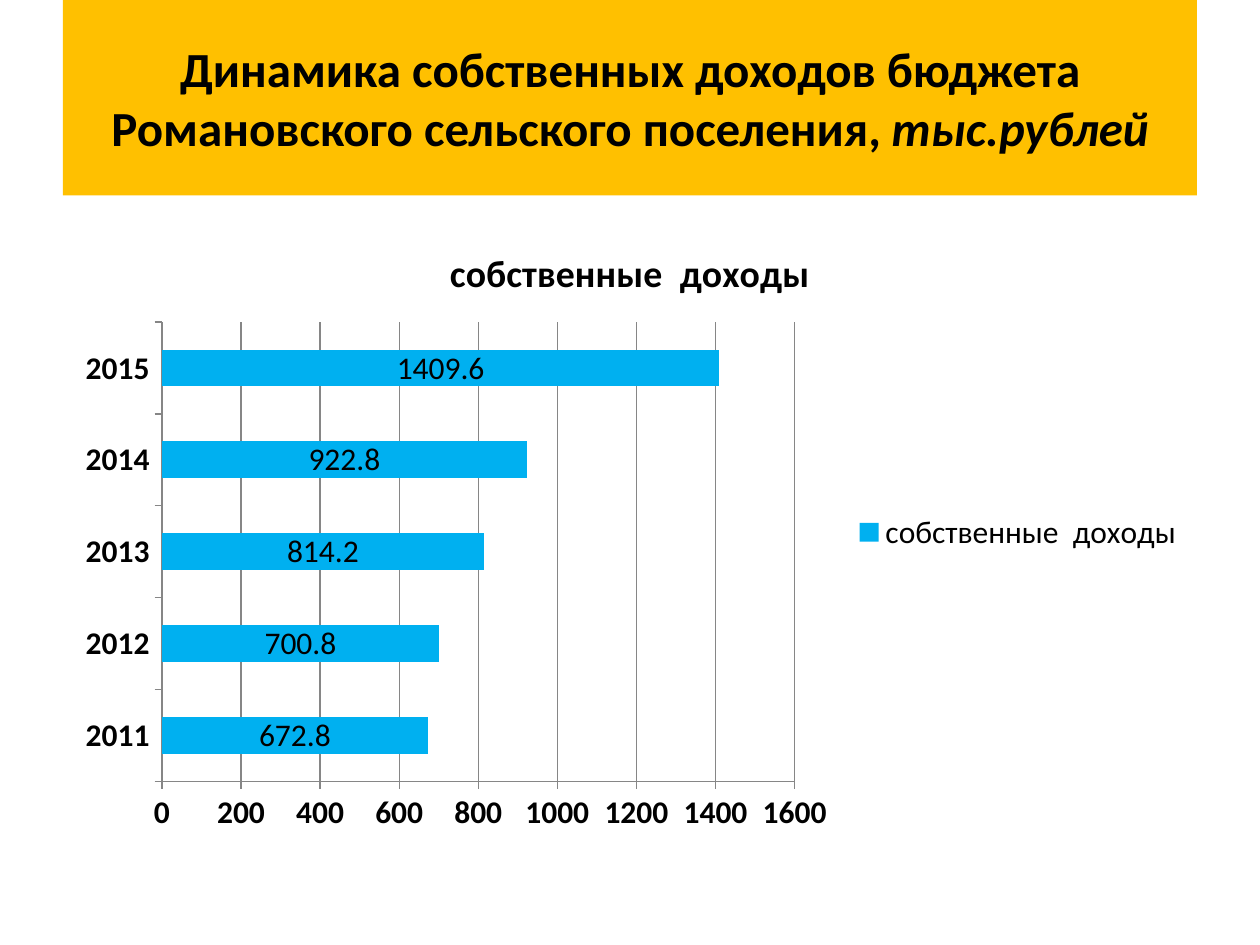
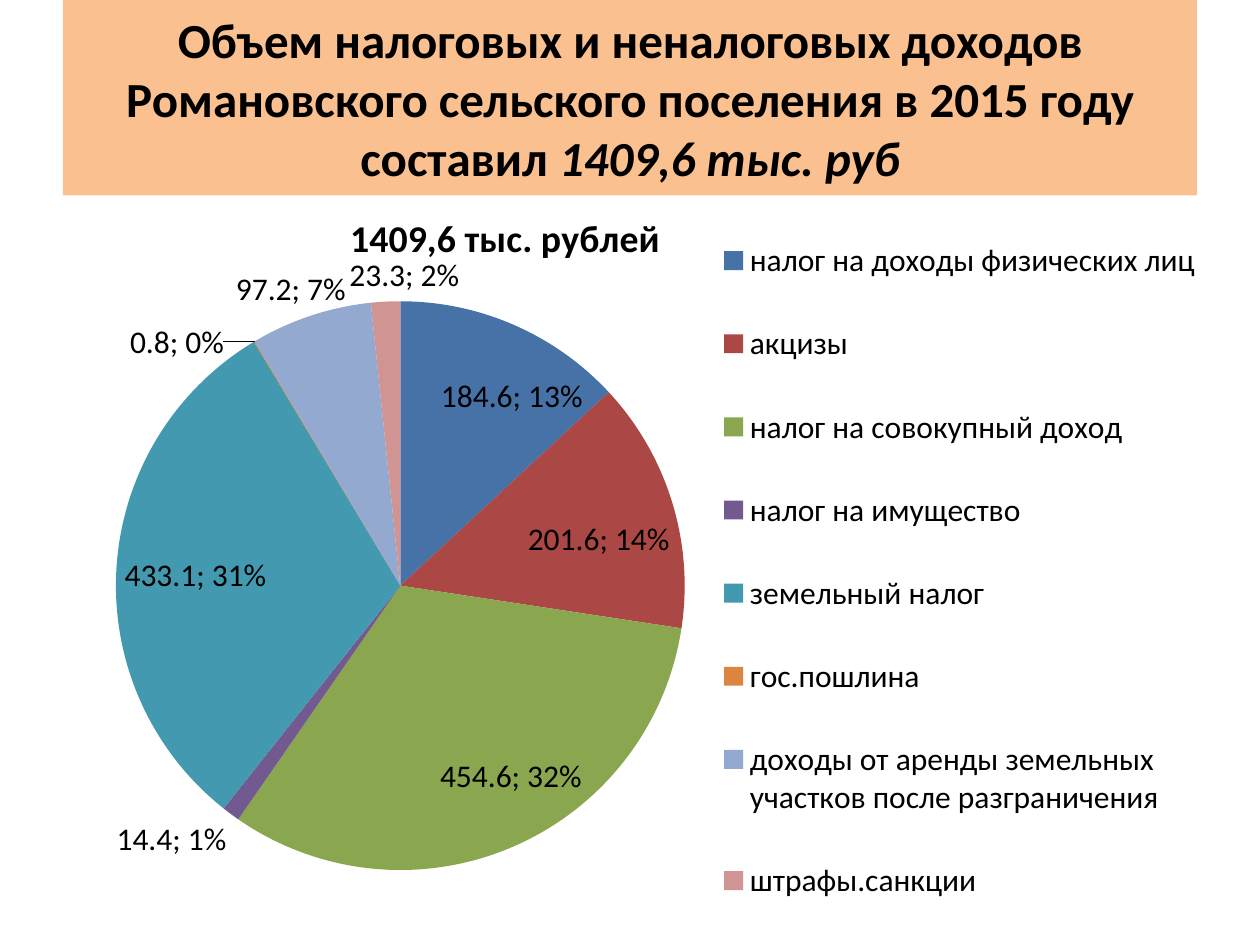
from lxml.etree import SubElement
from pptx import Presentation
from pptx.chart.data import CategoryChartData
from pptx.dml.color import RGBColor
from pptx.enum.chart import XL_CHART_TYPE, XL_LABEL_POSITION, XL_LEGEND_POSITION, XL_TICK_MARK
from pptx.enum.shapes import MSO_SHAPE
from pptx.enum.text import MSO_ANCHOR, PP_ALIGN
from pptx.oxml.ns import qn
from pptx.util import Inches, Pt

COLS, ROWS = 20, 30
BLACK, GREY = "000000", "868686"
HEAD = {"name": "Calibri", "size": Pt(28), "bold": True}
BODY = {"name": "Calibri", "size": Pt(18), "bold": False}
AXIS = BODY | {"bold": True}
TITLE = AXIS | {"size": Pt(21.6)}

INCOME = "собственные  доходы"
YEARS = {"2011": 672.8, "2012": 700.8, "2013": 814.2, "2014": 922.8, "2015": 1409.6}
TOTAL = "1409,6 тыс. рублей"
TAXES = [
    ("налог на доходы физических лиц", 184.6, "4672A8"),
    ("акцизы", 201.6, "AB4744"),
    ("налог на совокупный доход", 454.6, "8AA64F"),
    ("налог на имущество", 14.4, "725990"),
    ("земельный налог", 433.1, "4299B0"),
    ("гос.пошлина", 0.8, "DC853E"),
    ("доходы от аренды земельных участков после разграничения", 97.2, "93A9CF"),
    ("штрафы.санкции", 23.3, "D09493"),
]


def hue(code):
    """Turn a hex string into a colour."""
    return RGBColor.from_string(code)


def paint(fill, code):
    """Give a fill one solid colour."""
    fill.solid()
    fill.fore_color.rgb = hue(code)


def style(font, look):
    """Set a font from a dict of format values."""
    for key, value in look.items():
        setattr(font, key, value)
    font.color.rgb = hue(BLACK)


def place(part, index, **spots):
    """Give a chart part a manual layout."""
    for old in part.findall(qn("c:layout")):
        part.remove(old)
    layout = part.makeelement(qn("c:layout"))
    part.insert(index, layout)
    manual = SubElement(layout, qn("c:manualLayout"))
    for key, value in spots.items():
        SubElement(manual, qn(f"c:{key}")).set("val", str(value))


class Deck:
    """Holds the style and the current slide."""

    def __init__(self):
        """Open a deck of 10 by 7.5 inches."""
        self.file = Presentation()
        self.file.slide_width, self.file.slide_height = Inches(10), Inches(7.5)

    def box(self, col, row, wide, high):
        """Turn grid units into slide lengths."""
        across, down = self.file.slide_width / COLS, self.file.slide_height / ROWS
        return [round(n) for n in (col * across, row * down, wide * across, high * down)]

    def page(self, code, plain, slanted):
        """Start a slide with its title band."""
        self.slide = self.file.slides.add_slide(self.file.slide_layouts[6])
        band = self.slide.shapes.add_shape(MSO_SHAPE.RECTANGLE, *self.box(1, 0, 18, 6.2))
        band.shadow.inherit = False
        paint(band.fill, code)
        band.line.fill.background()
        frame = band.text_frame
        frame.word_wrap, frame.vertical_anchor = True, MSO_ANCHOR.MIDDLE
        line = frame.paragraphs[0]
        line.alignment = PP_ALIGN.CENTER
        for text, slant in ((plain, False), (slanted, True)):
            run = line.add_run()
            run.text = text
            style(run.font, HEAD | {"italic": slant})

    def chart(self, kind, spot, name, cats, vals):
        """Add a chart of one series with a title and a legend."""
        data = CategoryChartData()
        data.categories = cats
        data.add_series(name, vals)
        chart = self.slide.shapes.add_chart(kind, *self.box(*spot), data).chart
        style(chart.font, BODY)
        chart.has_title = chart.has_legend = True
        chart.chart_title.text_frame.text = name
        style(chart.chart_title.text_frame.paragraphs[0].runs[0].font, TITLE)
        chart.legend.position = XL_LEGEND_POSITION.RIGHT
        chart.legend.include_in_layout = False
        style(chart.legend.font, BODY)
        labels = chart.plots[0].series[0].data_labels
        style(labels.font, BODY)
        labels.show_value = True
        return chart, labels

    def bars(self, spot, name, data, code):
        """Add a chart of flat bars."""
        chart, labels = self.chart(XL_CHART_TYPE.BAR_STACKED, spot, name, list(data), list(data.values()))
        labels.position = XL_LABEL_POSITION.CENTER
        plot = chart.plots[0]
        plot.gap_width, plot.overlap, plot.vary_by_categories = 150, 100, False
        paint(plot.series[0].format.fill, code)
        values = chart.value_axis
        values.minimum_scale, values.maximum_scale, values.major_unit = 0, 1600, 200
        values.has_major_gridlines = True
        for axis in (chart.category_axis, values):
            axis.major_tick_mark = XL_TICK_MARK.OUTSIDE
            style(axis.tick_labels.font, AXIS)
        for item in (chart.category_axis, values, values.major_gridlines):
            item.format.line.color.rgb = hue(GREY)
            item.format.line.width = Pt(0.75)

    def pie(self, spot, name, data):
        """Add a pie with a colour for each slice."""
        cats, vals, codes = zip(*data)
        chart, labels = self.chart(XL_CHART_TYPE.PIE, spot, name, cats, vals)
        plot = chart.plots[0]
        plot.vary_by_categories = True
        for index, code in enumerate(codes):
            paint(plot.series[0].points[index].format.fill, code)
        labels.show_percentage = True
        labels.position = XL_LABEL_POSITION.BEST_FIT
        root = chart.element
        last = root.xpath(".//c:ser/c:dLbls/c:showBubbleSize")[0]
        mark = last.makeelement(qn("c:separator"))
        mark.text = "; "
        last.addnext(mark)
        edge = {"xMode": "edge", "yMode": "edge"}
        place(root.xpath(".//c:plotArea")[0], 0, layoutTarget="inner", **edge, x=0.02, y=0.14, w=0.54, h=0.76)
        place(root.xpath(".//c:title")[0], 1, **edge, x=0.24, y=0.01)
        place(root.xpath(".//c:legend")[0], 1, **edge, x=0.56, y=0, w=0.44, h=1)


def main():
    """Build both slides and save them."""
    deck = Deck()
    deck.page("FFC000", "Динамика собственных доходов бюджета Романовского сельского поселения, ", "тыс.рублей")
    deck.bars((1, 7, 18, 19.8), INCOME, YEARS, "00B0F0")
    deck.page(
        "FAC090",
        "Объем налоговых и неналоговых доходов Романовского сельского поселения в 2015 году составил ",
        "1409,6 тыс. руб",
    )
    deck.pie((1.1, 6.24, 18.12, 23.76), TOTAL, TAXES)
    deck.file.save("out.pptx")


if __name__ == "__main__":
    main()
